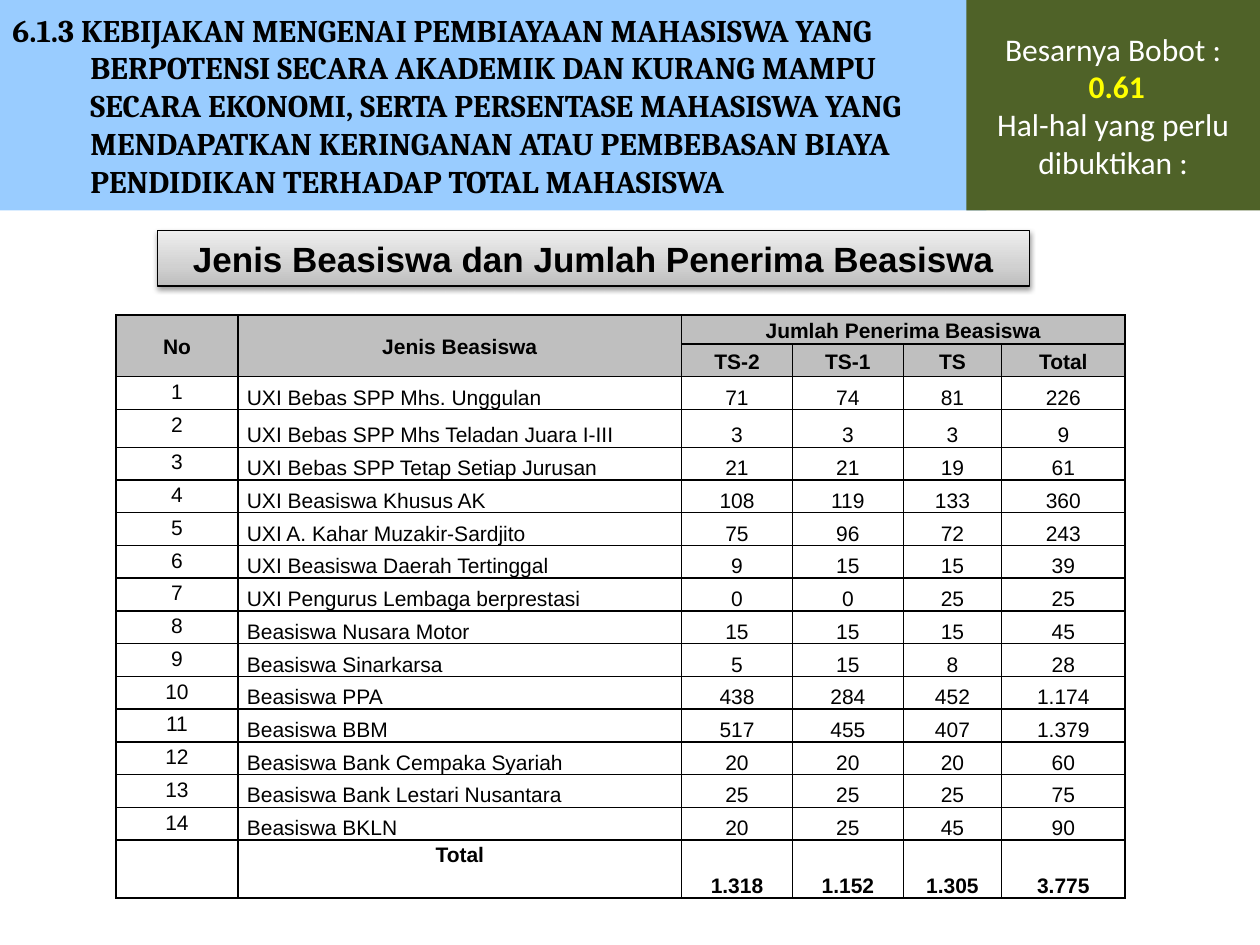
import copy

import pptx
import pptx.dml.color
import pptx.enum.shapes
import pptx.enum.text
import pptx.oxml
import pptx.oxml.ns
import pptx.util
from pptx.util import Inches

ALIGN = pptx.enum.text.PP_ALIGN
ANCHOR = pptx.enum.text.MSO_ANCHOR
NAMESPACE = pptx.oxml.ns.nsdecls("a")
qn = pptx.oxml.ns.qn


def color(hex_string):
    return pptx.dml.color.RGBColor.from_string(hex_string)


class SlideBuilder:
    """Holds the style and the current slide."""

    ink = "000000"
    header_fill = "BFBFBF"
    table_font = "Arial"
    table_size = 12

    def __init__(self, slide):
        self.slide = slide

    def set_font(self, font, name, size, hex_string, bold=False):
        font.name = name
        font.size = pptx.util.Pt(size)
        font.color.rgb = color(hex_string)
        font.bold = bold

    def box(self, left, top, width, height, fill=None):
        shape = self.slide.shapes.add_shape(
            pptx.enum.shapes.MSO_SHAPE.RECTANGLE,
            Inches(left), Inches(top), Inches(width), Inches(height))
        shape.shadow.inherit = False
        shape.line.fill.background()
        if fill:
            shape.fill.solid()
            shape.fill.fore_color.rgb = color(fill)
        shape.text_frame.word_wrap = True
        shape.text_frame.vertical_anchor = ANCHOR.MIDDLE
        return shape

    def add_text(self, shape, lines, name, size, hex_string, bold=False, align=ALIGN.CENTER):
        frame = shape.text_frame
        for index, line in enumerate(lines):
            paragraph = frame.add_paragraph() if index else frame.paragraphs[0]
            paragraph.alignment = align
            self.set_font(paragraph.font, name, size, hex_string, bold)
            paragraph.add_run().text = line

    def hanging_indent(self, shape, indent):
        properties = shape.text_frame.paragraphs[0]._p.get_or_add_pPr()
        properties.set("marL", str(Inches(indent)))
        properties.set("indent", str(-Inches(indent)))

    def gradient(self, shape, stops, angle):
        shape.fill.gradient()
        shape.fill.gradient_angle = angle
        stop_list = shape.element.spPr.find(".//" + qn("a:gsLst"))
        while len(stop_list) < len(stops):
            stop_list.append(copy.deepcopy(stop_list[0]))
        for stop, (position, hex_string) in zip(shape.fill.gradient_stops, stops):
            stop.position = position
            stop.color.rgb = color(hex_string)

    def drop_shadow(self, shape, blur, distance, opacity):
        effects = shape.element.spPr.find(qn("a:effectLst"))
        effects.append(pptx.oxml.parse_xml(
            f'<a:outerShdw {NAMESPACE} blurRad="{pptx.util.Pt(blur)}" '
            f'dist="{pptx.util.Pt(distance)}" dir="5400000" rotWithShape="0">'
            f'<a:srgbClr val="{self.ink}"><a:alpha val="{opacity * 1000}"/></a:srgbClr>'
            '</a:outerShdw>'))

    def table(self, left, top, widths, heights, rows, header_rows):
        table = self.slide.shapes.add_table(
            len(rows), len(widths), Inches(left), Inches(top),
            Inches(sum(widths)), Inches(sum(heights))).table
        table.first_row = table.horz_banding = False
        for column, width in zip(table.columns, widths):
            column.width = Inches(width)
        for row, height in zip(table.rows, heights):
            row.height = Inches(height)
        for row_index, values in enumerate(rows):
            header = row_index < header_rows
            bold = header or row_index == len(rows) - 1
            for column_index, value in enumerate(values):
                cell = table.cell(row_index, column_index)
                self.cell(cell, value, header, bold)
                if not header:
                    label = column_index == 1 and not bold
                    top_cell = column_index == 0 or (column_index == 1 and bold)
                    cell.vertical_anchor = ANCHOR.TOP if top_cell else ANCHOR.BOTTOM
                    cell.text_frame.paragraphs[0].alignment = ALIGN.LEFT if label else ALIGN.CENTER
        return table

    def cell(self, cell, value, header, bold):
        cell.margin_left = cell.margin_right = Inches(0.07)
        cell.margin_top = cell.margin_bottom = 0
        cell.vertical_anchor = ANCHOR.MIDDLE
        properties = cell._tc.get_or_add_tcPr()
        for side in ("lnL", "lnR", "lnT", "lnB"):
            properties.append(pptx.oxml.parse_xml(
                f'<a:{side} {NAMESPACE} w="{pptx.util.Pt(1)}"><a:solidFill>'
                f'<a:srgbClr val="{self.ink}"/></a:solidFill></a:{side}>'))
        if header:
            cell.fill.solid()
            cell.fill.fore_color.rgb = color(self.header_fill)
        else:
            cell.fill.background()
        paragraph = cell.text_frame.paragraphs[0]
        paragraph.alignment = ALIGN.CENTER
        paragraph.line_spacing = 1.15
        self.set_font(paragraph.font, self.table_font, self.table_size, self.ink, bold)
        if value:
            paragraph.add_run().text = value
        else:
            # An empty cell takes its row height from the end mark
            paragraph._p.append(pptx.oxml.parse_xml(
                f'<a:endParaRPr {NAMESPACE} sz="{self.table_size * 100}"/>'))


SCHOLARSHIPS = [
    ("UXI Bebas SPP Mhs. Unggulan", "71", "74", "81", "226"),
    ("UXI Bebas SPP Mhs Teladan Juara I-III", "3", "3", "3", "9"),
    ("UXI Bebas SPP Tetap Setiap Jurusan", "21", "21", "19", "61"),
    ("UXI Beasiswa Khusus AK", "108", "119", "133", "360"),
    ("UXI A. Kahar Muzakir-Sardjito", "75", "96", "72", "243"),
    ("UXI Beasiswa Daerah Tertinggal", "9", "15", "15", "39"),
    ("UXI Pengurus Lembaga berprestasi", "0", "0", "25", "25"),
    ("Beasiswa Nusara Motor", "15", "15", "15", "45"),
    ("Beasiswa Sinarkarsa", "5", "15", "8", "28"),
    ("Beasiswa PPA", "438", "284", "452", "1.174"),
    ("Beasiswa BBM", "517", "455", "407", "1.379"),
    ("Beasiswa Bank Cempaka Syariah", "20", "20", "20", "60"),
    ("Beasiswa Bank Lestari Nusantara", "25", "25", "25", "75"),
    ("Beasiswa BKLN", "20", "25", "45", "90"),
]


def main():
    presentation = pptx.Presentation()
    presentation.slide_width, presentation.slide_height = Inches(10), Inches(7.5)
    builder = SlideBuilder(presentation.slides.add_slide(presentation.slide_layouts[6]))

    # Heading
    heading = builder.box(0, 0, 7.83, 1.67, "99CCFF")
    builder.add_text(heading, [
        "6.1.3 KEBIJAKAN MENGENAI PEMBIAYAAN MAHASISWA YANG BERPOTENSI SECARA AKADEMIK "
        "DAN KURANG MAMPU SECARA EKONOMI, SERTA PERSENTASE MAHASISWA YANG MENDAPATKAN "
        "KERINGANAN ATAU PEMBEBASAN BIAYA PENDIDIKAN TERHADAP TOTAL MAHASISWA"],
        "Cambria", 18, builder.ink, bold=True, align=ALIGN.LEFT)
    builder.hanging_indent(heading, 0.62)

    # Scholarship table
    rows = [("No", "Jenis Beasiswa", "Jumlah Penerima Beasiswa", "", "", ""),
            ("", "", "TS-2", "TS-1", "TS", "Total")]
    rows += [(str(number), *values) for number, values in enumerate(SCHOLARSHIPS, 1)]
    rows.append(("", "Total", "1.318", "1.152", "1.305", "3.775"))
    widths = [0.97, 3.52, 0.88, 0.88, 0.78, 0.98]
    heights = [0.23, 0.26, 0.26, 0.3] + [0.26] * 12 + [0.46]
    table = builder.table(0.92, 2.5, widths, heights, rows, header_rows=2)
    for column in (0, 1):
        table.cell(0, column).merge(table.cell(1, column))
    table.cell(0, 2).merge(table.cell(0, 5))

    # Table title
    title = builder.box(1.25, 1.83, 6.92, 0.44)
    builder.gradient(title, [(0, "BDBDBD"), (0.35, "D1D1D1"), (1, "EEEEEE")], angle=90)
    title.line.color.rgb = color(builder.ink)
    title.line.width = pptx.util.Pt(0.75)
    builder.drop_shadow(title, blur=3.1, distance=1.6, opacity=38)
    title.text_frame.auto_size = pptx.enum.text.MSO_AUTO_SIZE.SHAPE_TO_FIT_TEXT
    builder.add_text(title, ["Jenis Beasiswa dan Jumlah Penerima Beasiswa"],
                     "Arial", 20, builder.ink, bold=True)

    # Weight panel
    panel = builder.box(7.67, 0, 2.33, 1.67, "4F6228")
    builder.add_text(panel, ["Besarnya Bobot :", " ", "Hal-hal yang perlu dibuktikan :"],
                     "Calibri", 18, "FFFFFF")
    weight = panel.text_frame.paragraphs[1].add_run()
    weight.text = "0.61"
    weight.font.bold = True
    weight.font.color.rgb = color("FFFF00")

    presentation.save("out.pptx")


if __name__ == "__main__":
    main()
